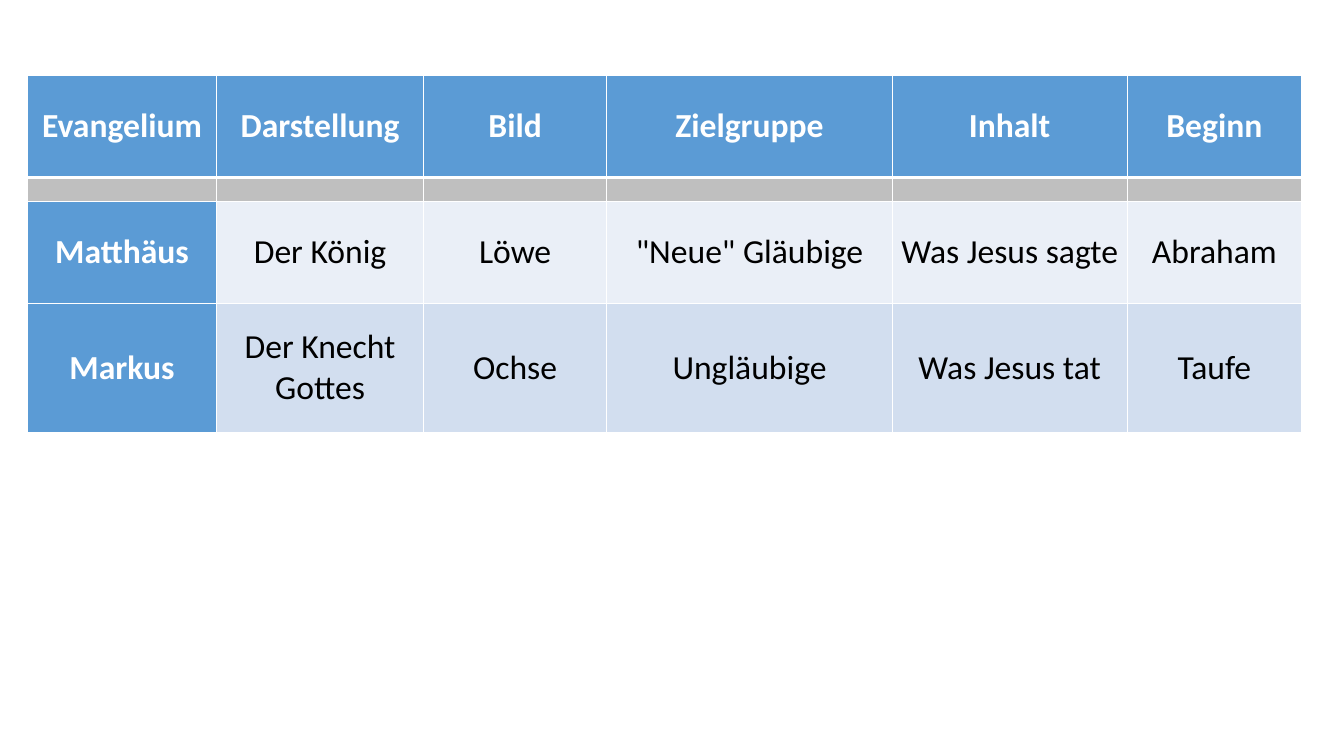
from lxml.etree import SubElement
from pptx import Presentation
from pptx.dml.color import RGBColor
from pptx.enum.text import MSO_ANCHOR, PP_ALIGN
from pptx.oxml.ns import qn
from pptx.util import Inches, Pt

COLORS = {
    "heading": "5B9BD5",
    "divider": "BFBFBF",
    "light_band": "EAEFF7",
    "dark_band": "D2DEEF",
    "white": "FFFFFF",
    "black": "000000",
}
COLUMN_WIDTHS = [1.88, 2.05, 1.82, 2.83, 2.33, 1.73]
ROW_HEIGHTS = [1.01, 0.24, 1.01, 1.28]
ROW_FILLS = ["heading", "divider", "light_band", "dark_band"]
GOSPELS = [
    ["Evangelium", "Darstellung", "Bild", "Zielgruppe", "Inhalt", "Beginn"],
    [""] * 6,
    ["Matthäus", "Der König", "Löwe", '"Neue" Gläubige', "Was Jesus sagte", "Abraham"],
    ["Markus", "Der Knecht Gottes", "Ochse", "Ungläubige", "Was Jesus tat", "Taufe"],
]
HEADER_ROW, DIVIDER_ROW = 0, 1


def add_border(cell, side, points):
    """Draw a white border on one side: L, R, T or B, called in that order."""
    line = SubElement(cell._tc.get_or_add_tcPr(), qn(f"a:ln{side}"), w=str(Pt(points)))
    fill = SubElement(line, qn("a:solidFill"))
    SubElement(fill, qn("a:srgbClr"), val=COLORS["white"])


prs = Presentation()
prs.slide_width = Inches(13.33)
prs.slide_height = Inches(7.5)
slide = prs.slides.add_slide(prs.slide_layouts[6])

gospel_table = slide.shapes.add_table(
    len(ROW_HEIGHTS), len(COLUMN_WIDTHS), Inches(0.27), Inches(0.75),
    Inches(sum(COLUMN_WIDTHS)), Inches(sum(ROW_HEIGHTS)),
).table
gospel_table.first_col = True
for column, width in zip(gospel_table.columns, COLUMN_WIDTHS):
    column.width = Inches(width)
for row, height in zip(gospel_table.rows, ROW_HEIGHTS):
    row.height = Inches(height)

for row_index, texts in enumerate(GOSPELS):
    for column_index, text in enumerate(texts):
        cell = gospel_table.cell(row_index, column_index)
        is_divider = row_index == DIVIDER_ROW
        is_heading = row_index == HEADER_ROW or (column_index == 0 and not is_divider)

        cell.margin_left = cell.margin_right = Inches(0.07)
        cell.margin_top = cell.margin_bottom = 0
        cell.vertical_anchor = MSO_ANCHOR.MIDDLE
        add_border(cell, "L", 1)
        add_border(cell, "R", 1)
        add_border(cell, "T", 3 if is_divider else 1)
        add_border(cell, "B", 3 if row_index == HEADER_ROW else 1)
        fill_name = "heading" if is_heading else ROW_FILLS[row_index]
        cell.fill.solid()
        cell.fill.fore_color.rgb = RGBColor.from_string(COLORS[fill_name])

        paragraph = cell.text_frame.paragraphs[0]
        paragraph.alignment = PP_ALIGN.CENTER
        if is_divider:
            # A small end mark keeps the empty row thin
            SubElement(paragraph._p, qn("a:endParaRPr"), sz="800")
            continue
        paragraph.text = text
        paragraph.font.name = "Calibri"
        paragraph.font.size = Pt(24)
        paragraph.font.bold = is_heading
        text_color = COLORS["white" if is_heading else "black"]
        paragraph.font.color.rgb = RGBColor.from_string(text_color)

prs.save("out.pptx")
